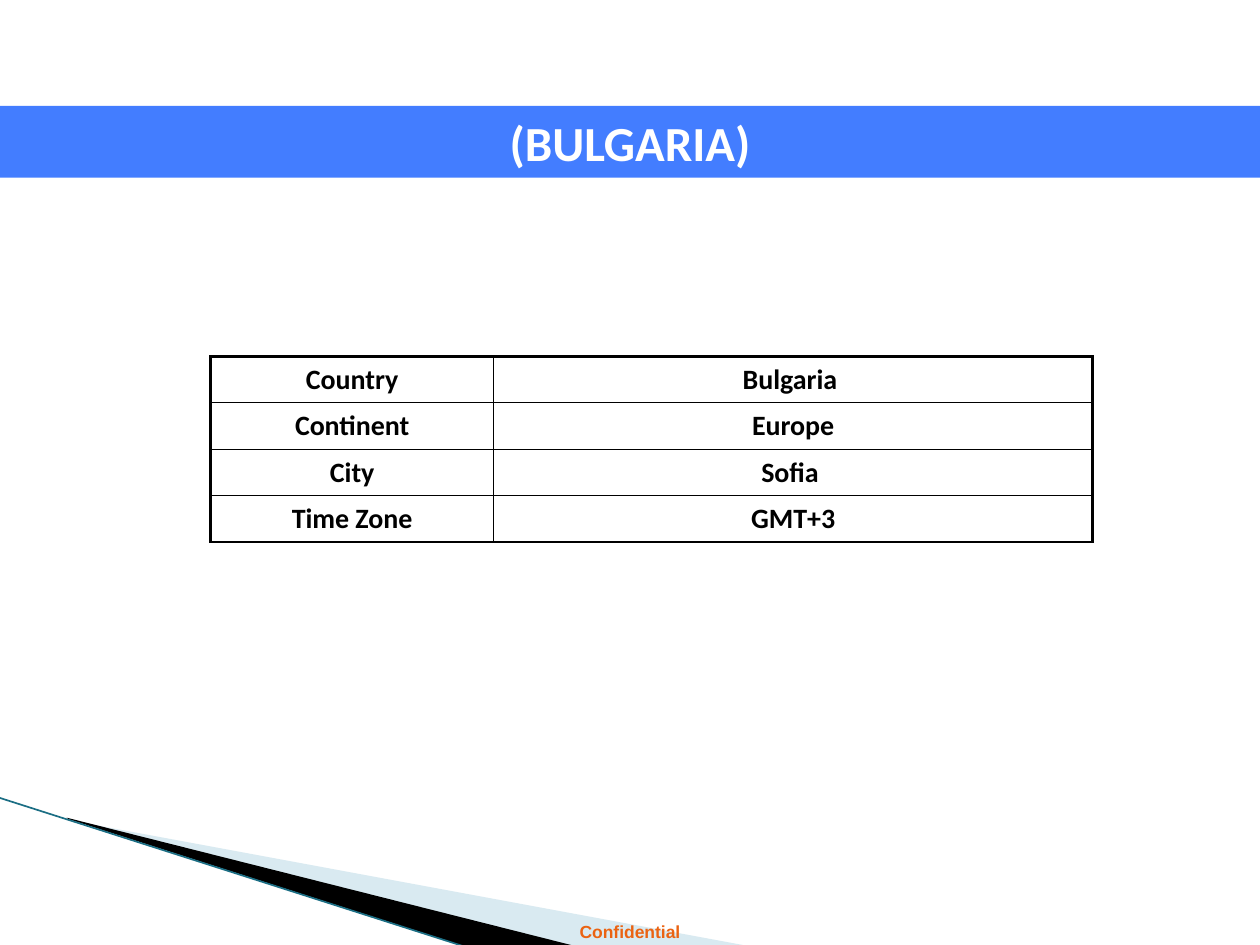
import dataclasses

import lxml.etree
import pptx
import pptx.dml.color
import pptx.enum.shapes
import pptx.enum.text
import pptx.oxml.ns
import pptx.util

WIDTH, HEIGHT = 10, 7.5
BLACK = "000000"
OUTER_PT, INNER_PT = 1.5, 0.75
FACTS = [
    ("Country", "Bulgaria "),
    ("Continent", "Europe"),
    ("City", "Sofia "),
    ("Time Zone", "GMT+3"),
]


@dataclasses.dataclass
class Wedge:
    points: list[tuple[float, float]]
    color: str
    opacity: int = 100


WEDGES = [
    Wedge([(0.55, 6.51), (5.95, 7.51), (4.56, 7.51), (0.55, 6.5)], "A0CBDC", 40),
    Wedge([(0.53, 6.49), (4.57, 7.51), (3.72, 7.52), (0.54, 6.5)], BLACK),
]


def rgb(color: str):
    return pptx.dml.color.RGBColor.from_string(color)


def inches(*lengths: float) -> list:
    return [pptx.util.Inches(n) for n in lengths]


def sub(parent, tag: str, **attrs: str):
    return lxml.etree.SubElement(parent, pptx.oxml.ns.qn(tag), attrs)


def write(tf, text: str, *, size: float, color: str, font: str = "Calibri") -> None:
    """Fill a text frame with one bold, centred line."""
    p = tf.paragraphs[0]
    p.alignment = pptx.enum.text.PP_ALIGN.CENTER
    r = p.add_run()
    r.text = text
    r.font.size = pptx.util.Pt(size)
    r.font.bold = True
    r.font.name = font
    r.font.color.rgb = rgb(color)


def paint(sp, color: str) -> None:
    sp.shadow.inherit = False
    sp.fill.solid()
    sp.fill.fore_color.rgb = rgb(color)
    sp.line.fill.background()


def add_wedge(s, wedge: Wedge) -> None:
    points = [(round(x * 100), round(y * 100)) for x, y in wedge.points]
    builder = s.shapes.build_freeform(*points[0], scale=pptx.util.Inches(0.01))
    builder.add_line_segments(points[1:], close=True)
    sp = builder.convert_to_shape()
    paint(sp, wedge.color)
    if wedge.opacity < 100:
        fill = sp.fill.fore_color._xFill
        sub(fill[0], "a:alpha", val=str(wedge.opacity * 1000))


def add_edge_line(s) -> None:
    line = s.shapes.add_connector(
        pptx.enum.shapes.MSO_CONNECTOR.STRAIGHT, *inches(-0.01, 6.33, 3.71, 7.52))
    line.line.color.rgb = rgb("1B6E84")
    line.line.width = pptx.util.Pt(0.95)
    sub(line._element.spPr, "a:effectLst")


def add_footer(s) -> None:
    sp = s.shapes.add_textbox(*inches(0, 7.26, WIDTH, 0.27))
    sp.text_frame.word_wrap = True
    write(sp.text_frame, "Confidential", size=10, color="EB6312", font="Arial")


def add_title_band(s) -> None:
    sp = s.shapes.add_shape(
        pptx.enum.shapes.MSO_SHAPE.RECTANGLE, *inches(0, 0.84, WIDTH, 0.57))
    paint(sp, "437DFF")
    sp.text_frame.vertical_anchor = pptx.enum.text.MSO_ANCHOR.MIDDLE
    write(sp.text_frame, "(BULGARIA)", size=28, color="FFFFFF")


def set_borders(cell, widths: dict[str, float]) -> None:
    """Draw the cell's borders; the schema wants them before its fill."""
    tc_pr = cell._tc.get_or_add_tcPr()
    for side, width in widths.items():
        ln = sub(tc_pr, f"a:ln{side}", w=str(pptx.util.Pt(width)))
        sub(sub(ln, "a:solidFill"), "a:srgbClr", val=BLACK)


def add_facts_table(s) -> None:
    frame = s.shapes.add_table(len(FACTS), 2, *inches(1.67, 2.83, 7, 1.47))
    table = frame.table
    table.first_row = table.horz_banding = False
    for column, width in zip(table.columns, inches(2.25, 4.75)):
        column.width = width
    last_row, last_col = len(FACTS) - 1, 1
    for i, fact in enumerate(FACTS):
        for j, text in enumerate(fact):
            cell = table.cell(i, j)
            on_rim = {"L": j == 0, "R": j == last_col, "T": i == 0, "B": i == last_row}
            set_borders(cell, {side: OUTER_PT if rim else INNER_PT
                               for side, rim in on_rim.items()})
            cell.fill.background()
            cell.vertical_anchor = pptx.enum.text.MSO_ANCHOR.MIDDLE
            write(cell.text_frame, text, size=16, color=BLACK)


def main() -> None:
    prs = pptx.Presentation()
    prs.slide_width, prs.slide_height = inches(WIDTH, HEIGHT)
    s = prs.slides.add_slide(prs.slide_layouts[6])
    for wedge in WEDGES:
        add_wedge(s, wedge)
    add_edge_line(s)
    add_footer(s)
    add_title_band(s)
    add_facts_table(s)
    prs.save("out.pptx")


if __name__ == "__main__":
    main()
